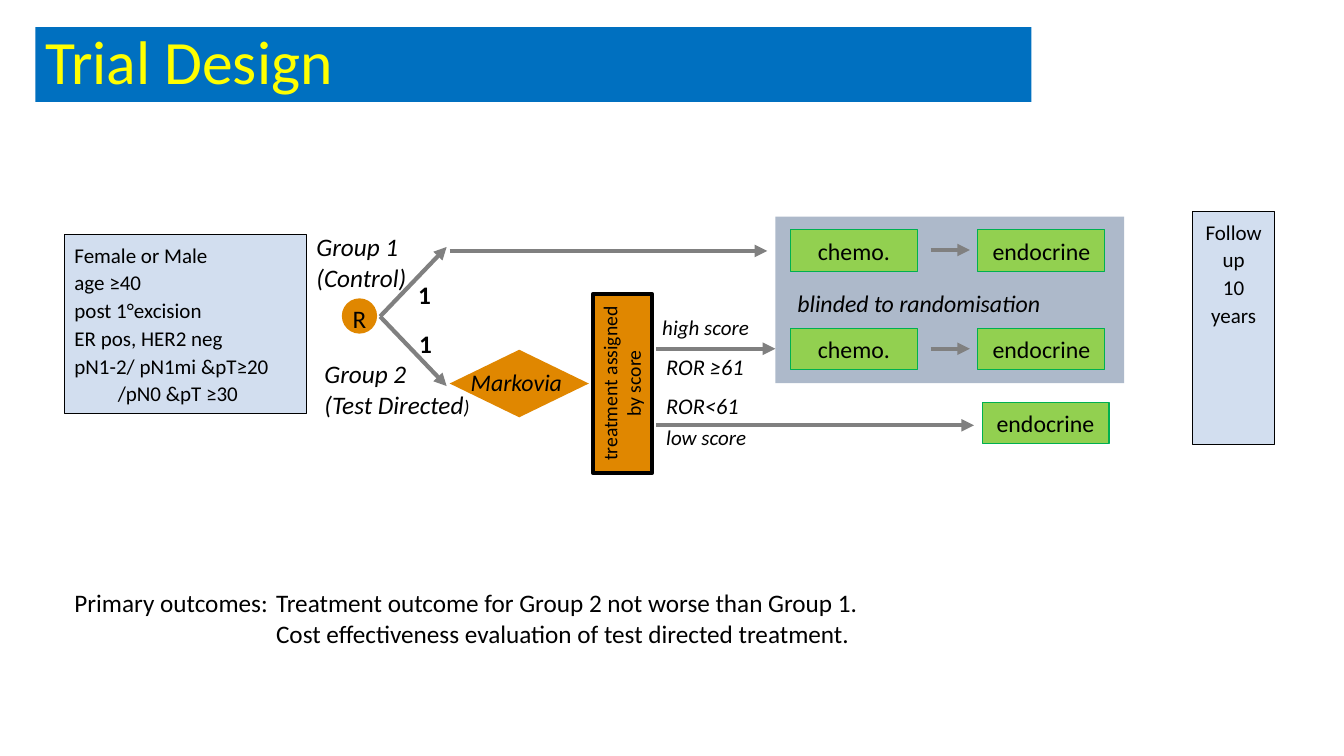
from dataclasses import dataclass

from lxml import etree
from pptx import Presentation
from pptx.dml.color import RGBColor
from pptx.enum import shapes, text
from pptx.oxml.ns import qn
from pptx.util import Inches, Pt


@dataclass(frozen=True)
class Theme:
    font: str = "Calibri"
    black: str = "000000"
    title_fill: str = "0070C0"
    title_text: str = "FFFF00"
    note_fill: str = "D2DEEF"
    panel_fill: str = "ADB9CA"
    treatment_fill: str = "92D050"
    treatment_line: str = "00B050"
    decision_fill: str = "E08700"
    arrow: str = "808080"
    title_size: int = 44
    body_size: int = 18
    step_size: int = 17
    ror_size: int = 16
    note_size: int = 15
    small_size: int = 14


theme = Theme()
kinds = shapes.MSO_SHAPE
middle, top = text.MSO_ANCHOR.MIDDLE, text.MSO_ANCHOR.TOP
left, center = text.PP_ALIGN.LEFT, text.PP_ALIGN.CENTER

deck = Presentation()
deck.slide_width, deck.slide_height = Inches(13.33), Inches(7.5)
slide = deck.slides.add_slide(deck.slide_layouts[6])


def add_box(frame, words="", size=theme.body_size, kind=None, fill=None, line=None,
            line_width=0.75, color=theme.black, align=left, anchor=top,
            insets=(0.1, 0.05), spacing=1.0, italic=False, bold=False):
    """Add a preset shape, or a text box when no kind is given."""
    place = [Inches(value) for value in frame]
    if kind is None:
        box = slide.shapes.add_textbox(*place)
    else:
        box = slide.shapes.add_shape(kind, *place)
        box.shadow.inherit = False
        box.fill.solid()
        box.fill.fore_color.rgb = RGBColor.from_string(fill)
        if line:
            box.line.color.rgb = RGBColor.from_string(line)
            box.line.width = Pt(line_width)
        else:
            box.line.fill.background()
    body = box.text_frame
    body.word_wrap = True
    body.vertical_anchor = anchor
    body.margin_left = body.margin_right = Inches(insets[0])
    body.margin_top = body.margin_bottom = Inches(insets[1])
    body.text = words
    for para in body.paragraphs:
        para.alignment = align
        para.line_spacing = spacing
        for span in para.runs:
            span.font.name = theme.font
            span.font.size = Pt(size)
            span.font.italic = italic
            span.font.bold = bold
            span.font.color.rgb = RGBColor.from_string(color)
    return box


def add_arrow(x1, y1, x2, y2):
    arrow = slide.shapes.add_connector(
        shapes.MSO_CONNECTOR.STRAIGHT, Inches(x1), Inches(y1), Inches(x2), Inches(y2))
    arrow.line.color.rgb = RGBColor.from_string(theme.arrow)
    arrow.line.width = Pt(3)
    etree.SubElement(arrow.line._get_or_add_ln(), qn("a:tailEnd"), type="triangle")
    etree.SubElement(arrow._element.spPr, qn("a:effectLst"))


# Title
add_box((0.35, 0.27, 9.88, 0.74), "Trial Design", theme.title_size, kinds.RECTANGLE,
        theme.title_fill, color=theme.title_text, anchor=middle, spacing=0.9)

# Eligibility and follow-up
criteria = add_box(
    (0.64, 2.33, 2.4, 1.77),
    "Female or Male\nage ≥40\npost 1°excision\nER pos, HER2 neg\n"
    "pN1-2/ pN1mi &pT≥20\v/pN0 &pT ≥30",
    theme.note_size, kinds.RECTANGLE, theme.note_fill, theme.black, spacing=1.1)
for para in criteria.text_frame.paragraphs:
    properties = para._p.get_or_add_pPr()
    properties.set("marL", str(Inches(0.43)))
    properties.set("indent", str(Inches(-0.43)))
add_box((11.83, 2.1, 0.81, 2.31), "Follow\nup\n10\nyears", theme.note_size,
        kinds.RECTANGLE, theme.note_fill, theme.black, align=center, spacing=1.1)

# Randomisation into two groups
add_box((3.39, 2.96, 0.35, 0.35), "R", kind=kinds.OVAL, fill=theme.decision_fill,
        align=center, insets=(0, 0))
for arm_y, ratio_x, ratio_y in ((2.45, 4.05, 2.72), (3.83, 4.06, 3.21)):
    add_arrow(3.77, 3.14, 4.43, arm_y)
    add_box((ratio_x, ratio_y, 0.34, 0.4), "1", bold=True)
add_box((3.04, 2.25, 1.1, 0.71), "Group 1\n(Control)", italic=True)
test_group = add_box((3.12, 3.51, 1.7, 0.71), "Group 2\n(Test Directed", italic=True)
bracket = test_group.text_frame.paragraphs[1].add_run()
bracket.text = ")"
bracket.font.name = theme.font
bracket.font.size = Pt(theme.small_size)
bracket.font.italic = True
bracket.font.color.rgb = RGBColor.from_string(theme.black)

# Test and assignment by score
add_box((4.46, 3.47, 1.38, 0.67), kind=kinds.FLOWCHART_DECISION, fill=theme.decision_fill)
add_box((4.57, 3.6, 1.18, 0.39), "Markovia", theme.step_size, italic=True)
assignment = add_box((5.29, 3.51, 1.77, 0.59), "treatment assigned by score",
                     theme.small_size, kinds.RECTANGLE, theme.decision_fill, theme.black,
                     line_width=3, align=center, insets=(0.04, 0.05))
assignment.rotation = 270

# Blinded panel and treatments
add_box((7.69, 2.15, 3.46, 1.65), kind=kinds.RECTANGLE, fill=theme.panel_fill)
add_box((7.81, 2.81, 3.18, 0.39), "blinded to randomisation", theme.step_size, italic=True)
treatments = [(9.74, 3.99, "endocrine")]
for row_y in (2.28, 3.26):
    treatments += [(7.84, row_y, "chemo."), (9.7, row_y, "endocrine")]
    add_arrow(9.23, row_y + 0.2, 9.62, row_y + 0.2)
for x, y, name in treatments:
    add_box((x, y, 1.26, 0.41), name, theme.step_size, kinds.RECTANGLE,
            theme.treatment_fill, theme.treatment_line, align=center, anchor=middle,
            insets=(0.04, 0.05))

# Paths to treatment
for x1, x2, y in ((4.46, 7.61, 2.49), (6.51, 7.69, 3.46), (6.51, 9.66, 4.22)):
    add_arrow(x1, y, x2, y)
for x, y, words, size in (
    (6.47, 3.07, "high score", theme.note_size),
    (6.51, 3.45, "ROR ≥61", theme.ror_size),
    (6.51, 3.84, "ROR<61", theme.ror_size),
    (6.51, 4.16, "low score", theme.note_size),
):
    add_box((x, y, 1.2, 0.36), words, size, italic=True)

# Outcomes, aligned on a hanging indent
outcomes = add_box(
    (0.64, 5.78, 12, 0.71),
    "Primary outcomes:\tTreatment outcome for Group 2 not worse than Group 1.\n"
    "Cost effectiveness evaluation of test directed treatment.")
for para, indent in zip(outcomes.text_frame.paragraphs, (-2, 0)):
    properties = para._p.get_or_add_pPr()
    properties.set("marL", str(Inches(2)))
    properties.set("indent", str(Inches(indent)))

deck.save("out.pptx")
